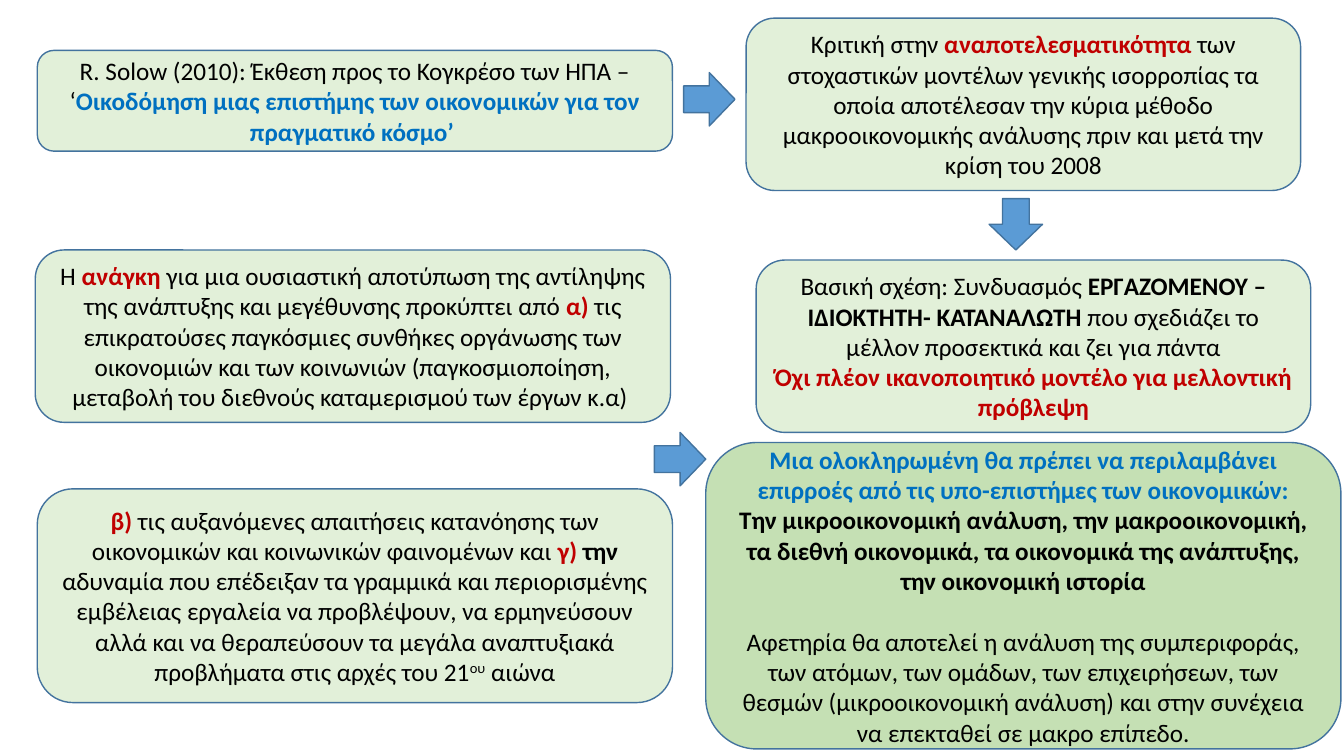
from pptx import Presentation
from pptx.dml.color import RGBColor
from pptx.enum.shapes import MSO_SHAPE
from pptx.enum.text import MSO_ANCHOR, PP_ALIGN
from pptx.util import Pt

PX = 9144  # EMU per px, 100 px to the inch
BLACK, RED, BLUE = "000000", "C00000", "0070C0"
PALE_GREEN, GREEN = "E2F0D9", "C5E0B4"
BOX_W, SIDE_W, BOX_H = 630, 550, 171

# Run styles: colour, bold, superscript
STYLES = {
    "plain": (BLACK, False, False),
    "bold": (BLACK, True, False),
    "red": (RED, True, False),
    "blue": (BLUE, True, False),
    "super": (BLACK, False, True),
}


def rgb(value):
    return RGBColor.from_string(value)


class SlideBuilder:
    font, size = "Calibri", 18
    outline, arrow_fill = "43739E", "5B9BD5"

    def __init__(self, slide):
        self.s = slide

    def shape(self, kind, x, y, w, h, fill):
        sp = self.s.shapes.add_shape(kind, x * PX, y * PX, w * PX, h * PX)
        sp.shadow.inherit = False
        sp.fill.solid()
        sp.fill.fore_color.rgb = rgb(fill)
        sp.line.color.rgb = rgb(self.outline)
        sp.line.width = Pt(1)
        return sp

    def arrow(self, x, y, rotation=0):
        sp = self.shape(MSO_SHAPE.RIGHT_ARROW, x, y, 51, 53, self.arrow_fill)
        sp.rotation = rotation

    def box(self, x, y, w, h, paragraphs, fill=PALE_GREEN, last_gap=0):
        """Rounded box; each paragraph is a list of (text, style) runs.

        last_gap is the space in points above the last paragraph.
        """
        tf = self.shape(MSO_SHAPE.ROUNDED_RECTANGLE, x, y, w, h, fill).text_frame
        tf.word_wrap = True
        tf.vertical_anchor = MSO_ANCHOR.MIDDLE
        for i, runs in enumerate(paragraphs):
            p = tf.add_paragraph() if i else tf.paragraphs[0]
            p.alignment = PP_ALIGN.CENTER
            for text, style in runs:
                self.run(p, text, style)
        if last_gap:
            p.space_before = Pt(last_gap)

    def run(self, p, text, style):
        colour, bold, superscript = STYLES[style]
        r = p.add_run()
        r.text = text
        r.font.name = self.font
        r.font.size = Pt(self.size)
        r.font.bold = bold
        r.font.color.rgb = rgb(colour)
        if superscript:
            r._r.get_or_add_rPr().set("baseline", "30000")


def main():
    prs = Presentation()
    prs.slide_width, prs.slide_height = 1333 * PX, 750 * PX
    b = SlideBuilder(prs.slides.add_slide(prs.slide_layouts[6]))

    b.box(37, 50, BOX_W, 100, [[
        ("R. Solow (2010): Έκθεση προς το Κογκρέσο των ΗΠΑ – ‘", "plain"),
        ("Οικοδόμηση μιας επιστήμης των οικονομικών για τον πραγματικό κόσμο’ ", "blue"),
    ]])
    b.arrow(678, 72)
    b.box(740, 18, SIDE_W, BOX_H, [[
        ("Κριτική στην ", "plain"),
        ("αναποτελεσματικότητα", "red"),
        (" των στοχαστικών μοντέλων γενικής ισορροπίας τα οποία αποτέλεσαν την κύρια "
         "μέθοδο μακροοικονομικής ανάλυσης πριν και μετά την κρίση του 2008", "plain"),
    ]])
    b.arrow(982, 196, rotation=90)
    b.box(750, 258, SIDE_W, BOX_H, [
        [("Βασική σχέση: Συνδυασμός ", "plain"),
         ("ΕΡΓΑΖΟΜΕΝΟΥ – ΙΔΙΟΚΤΗΤΗ- ΚΑΤΑΝΑΛΩΤΗ", "bold"),
         (" που σχεδιάζει το μέλλον προσεκτικά και ζει για πάντα", "plain")],
        [("Όχι πλέον ικανοποιητικό μοντέλο για μελλοντική πρόβλεψη", "red")],
    ])
    b.box(700, 439, BOX_W, 304, [
        [("Μια ολοκληρωμένη θα πρέπει να περιλαμβάνει επιρροές από τις "
          "υπο-επιστήμες των οικονομικών:", "blue")],
        [("Την μικροοικονομική ανάλυση, την μακροοικονομική, τα διεθνή οικονομικά, "
          "τα οικονομικά της ανάπτυξης, την οικονομική ιστορία", "bold")],
        [("Αφετηρία θα αποτελεί η ανάλυση της συμπεριφοράς, των ατόμων, των ομάδων, "
          "των επιχειρήσεων, των θεσμών (μικροοικονομική ανάλυση) και στην συνέχεια "
          "να επεκταθεί σε μακρο επίπεδο.", "plain")],
    ], fill=GREEN, last_gap=22)
    b.arrow(649, 429)
    b.box(35, 248, BOX_W, BOX_H, [[
        ("Η ", "plain"),
        ("ανάγκη", "red"),
        (" για μια ουσιαστική αποτύπωση της αντίληψης της ανάπτυξης και μεγέθυνσης "
         "προκύπτει από ", "plain"),
        ("α)", "red"),
        (" τις επικρατούσες παγκόσμιες συνθήκες οργάνωσης των οικονομιών και των "
         "κοινωνιών (παγκοσμιοποίηση, μεταβολή του διεθνούς καταμερισμού των έργων "
         "κ.α) ", "plain"),
    ]])
    b.box(37, 485, BOX_W, 212, [[
        ("β) ", "red"),
        ("τις αυξανόμενες απαιτήσεις κατανόησης των οικονομικών και κοινωνικών "
         "φαινομένων και ", "plain"),
        ("γ) ", "red"),
        ("την ", "bold"),
        ("αδυναμία που επέδειξαν τα γραμμικά και περιορισμένης εμβέλειας εργαλεία να "
         "προβλέψουν, να ερμηνεύσουν αλλά και να θεραπεύσουν τα μεγάλα αναπτυξιακά "
         "προβλήματα στις αρχές του 21", "plain"),
        ("ου", "super"),
        (" αιώνα", "plain"),
    ]])

    prs.save("out.pptx")


if __name__ == "__main__":
    main()
